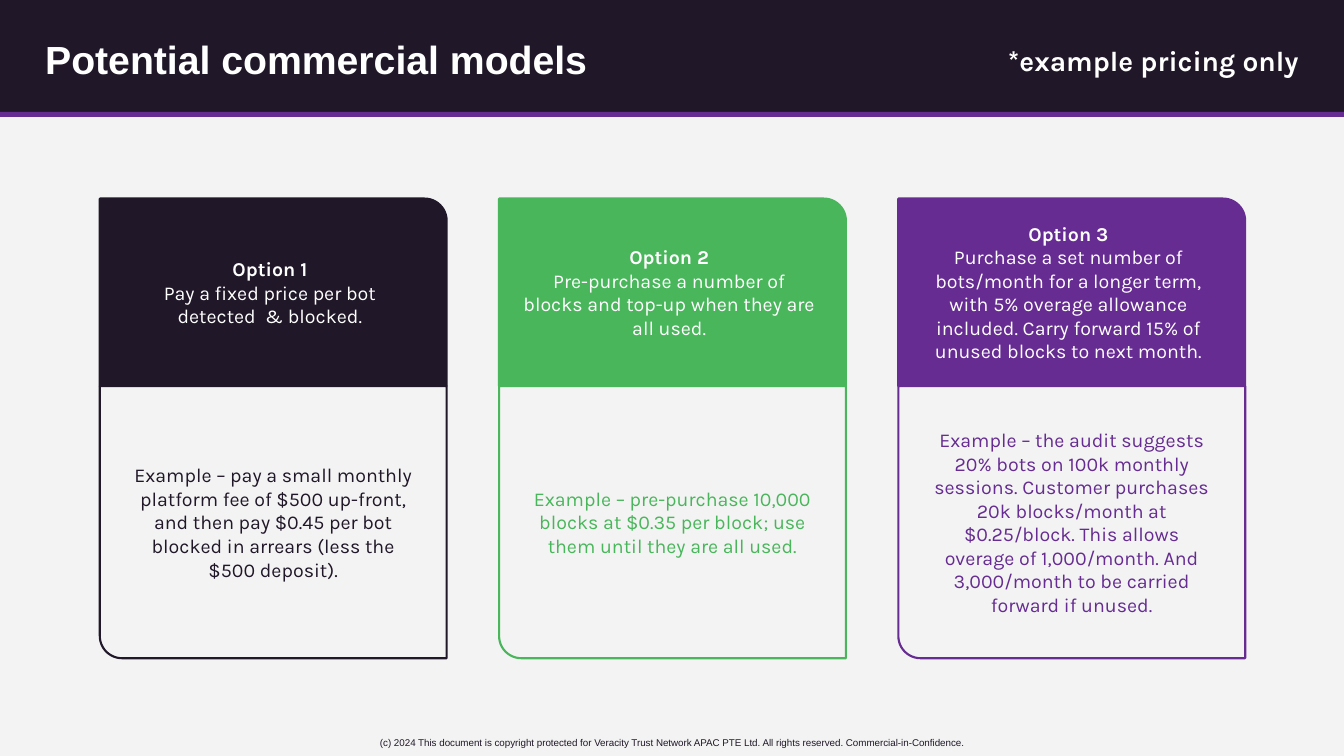
from pptx import Presentation
from pptx.dml.color import RGBColor
from pptx.enum.shapes import MSO_SHAPE
from pptx.enum.text import MSO_ANCHOR, PP_ALIGN
from pptx.util import Inches, Pt

DARK, GREEN, PURPLE = "201728", "49B65B", "662C91"
WHITE, PAPER = "FFFFFF", "F3F3F3"

OPTIONS = [
    ("Option 1", "Pay a fixed price per bot detected  & blocked.",
     "Example – pay a small monthly platform fee of $500 up-front, and then pay "
     "$0.45 per bot blocked in arrears (less the $500 deposit).", DARK),
    ("Option 2", "Pre-purchase a number of blocks and top-up when they are all used.",
     "Example – pre-purchase 10,000 blocks at $0.35 per block; use them until "
     "they are all used.", GREEN),
    ("Option 3", "Purchase a set number of bots/month for a longer term, with 5% overage "
     "allowance included. Carry forward 15% of unused blocks to next month.",
     "Example – the audit suggests 20% bots on 100k monthly sessions. Customer "
     "purchases 20k blocks/month at $0.25/block. This allows overage of 1,000/month. "
     "And 3,000/month to be carried forward if unused.", PURPLE),
]


def color(value):
    return RGBColor.from_string(value)


def write(shape, text, heading=None, size=14, font="Karla", fill=WHITE, bold=False,
          align=PP_ALIGN.CENTER, anchor=MSO_ANCHOR.MIDDLE, spacing=None, inset=None):
    """Fill a shape with one paragraph, led by an optional bold heading line."""
    frame = shape.text_frame
    frame.word_wrap = True
    frame.vertical_anchor = anchor
    if inset is not None:
        frame.margin_left = frame.margin_right = Inches(inset)
        frame.margin_top = frame.margin_bottom = Inches(inset)
    paragraph = frame.paragraphs[0]
    paragraph.alignment = align
    if spacing:
        paragraph.line_spacing = spacing
    runs = [(heading, True)] if heading else []
    runs.append((text, bold))
    for index, (words, is_bold) in enumerate(runs):
        if index:
            paragraph.add_line_break()
        run = paragraph.add_run()
        run.text = words
        run.font.name = font
        run.font.size = Pt(size)
        run.font.bold = is_bold
        run.font.color.rgb = color(fill)


def add_text(slide, left, top, width, height, text, **text_format):
    box = slide.shapes.add_textbox(Inches(left), Inches(top), Inches(width), Inches(height))
    write(box, text, **text_format)


def add_block(shapes, kind, left, top, width, height, fill, line=None, corner=None):
    shape = shapes.add_shape(kind, Inches(left), Inches(top), Inches(width), Inches(height))
    shape.shadow.inherit = False
    shape.fill.solid()
    shape.fill.fore_color.rgb = color(fill)
    if line:
        shape.line.color.rgb = color(line)
        shape.line.width = Pt(1.5)
    else:
        shape.line.fill.background()
    if corner:
        # The corner radius is a share of the shorter side
        shape.adjustments[0] = corner / min(width, height)
    return shape


def add_header(slide, left, top, width, height):
    # Dark band with a purple rule below it
    add_block(slide.shapes, MSO_SHAPE.RECTANGLE, left, top, width, height, DARK)
    add_block(slide.shapes, MSO_SHAPE.RECTANGLE, left, top + height - 0.01, width, 0.05, PURPLE)
    # Title and remark
    add_text(slide, left + 0.35, top + 0.29, 6.72, 0.65, "Potential commercial models",
             size=28, font="Arial", bold=True, align=PP_ALIGN.LEFT, spacing=0.9)
    add_text(slide, left + width - 6.14, top + 0.29, 5.79, 0.65, "*example pricing only",
             size=20, bold=True, align=PP_ALIGN.RIGHT, spacing=0.9)


def add_option_card(slide, left, top, width, height, name, offer, example, accent):
    head_height = 1.86
    body_top, body_height = top + head_height, height - head_height
    # Coloured head
    head = add_block(slide.shapes, MSO_SHAPE.ROUND_1_RECTANGLE, left, top, width, head_height,
                     accent, line=accent, corner=0.22)
    write(head, offer, heading=name, inset=0.24)
    # Outlined body, turned so that its round corner is at bottom left
    body = add_block(slide.shapes, MSO_SHAPE.ROUND_1_RECTANGLE, left, body_top, width,
                     body_height, PAPER, line=accent, corner=0.22)
    body.rotation = 180
    add_text(slide, left + 0.23, body_top, width - 0.46, body_height, example, fill=accent)


def add_footer(slide, left, top, width, height):
    add_text(slide, left, top, width, height,
             "(c) 2024 This document is copyright protected for Veracity Trust Network "
             "APAC PTE Ltd. All rights reserved. Commercial-in-Confidence.",
             size=7, font="Arial", fill=DARK, anchor=MSO_ANCHOR.TOP)


def main():
    presentation = Presentation()
    presentation.slide_width, presentation.slide_height = Inches(13.33), Inches(7.5)
    slide = presentation.slides.add_slide(presentation.slide_layouts[6])
    slide.background.fill.solid()
    slide.background.fill.fore_color.rgb = color(PAPER)

    add_footer(slide, 2.71, 7.26, 7.91, 0.22)
    add_header(slide, 0, 0, 13.33, 1.12)
    card_width, gap = 3.44, 0.52
    for index, option in enumerate(OPTIONS):
        add_option_card(slide, 0.99 + index * (card_width + gap), 1.97, card_width, 4.56, *option)

    presentation.save("out.pptx")


if __name__ == "__main__":
    main()
